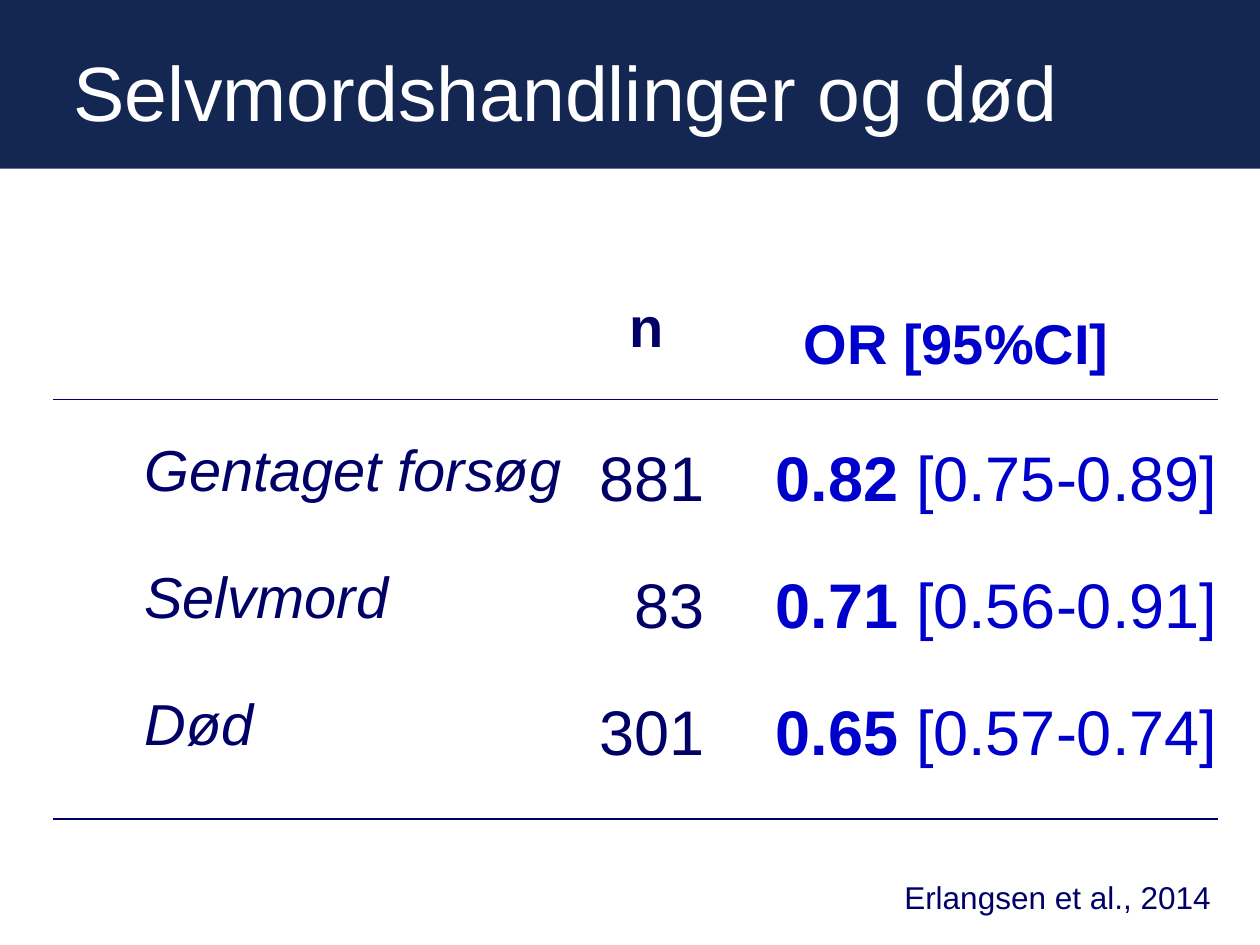
from lxml import etree
from pptx import Presentation
from pptx import util as u
from pptx.dml import color
from pptx.enum import shapes, text
from pptx.oxml import ns

TITLE = "Selvmordshandlinger og død"
SOURCE = "Erlangsen et al., 2014"
HEADINGS = {"count": "n", "ratio": "OR [95%CI]"}
ROWS = [
    (" Gentaget forsøg", "881", "0.82", " [0.75-0.89]"),
    (" Selvmord", "83", "0.71", " [0.56-0.91]"),
    (" Død", "301", "0.65", " [0.57-0.74]"),
]
FONT = "Arial"
BAND, WHITE, NAVY, BLUE = "142752", "FFFFFF", "000066", "0000CC"
WIDTH, HEIGHT, BAND_HEIGHT = 25.4, 19.05, 3.4
RULE_LEFT, RULE_RIGHT, RULE_TOPS = 1.07, 24.56, (8.05, 16.51)
LABEL_TOP, VALUE_TOP, ROW_STEP = 8.74, 8.84, 2.56
LEFT, RIGHT = text.PP_ALIGN.LEFT, text.PP_ALIGN.RIGHT


def rgb(value):
    return color.RGBColor.from_string(value)


def write(frame, parts, size, ink, align=LEFT, italic=False):
    para = frame.paragraphs[0]
    para.alignment = align
    for words, bold in parts:
        span = para.add_run()
        span.text = words
        span.font.name = FONT
        span.font.size = u.Pt(size)
        span.font.bold = bold
        span.font.italic = italic
        span.font.color.rgb = rgb(ink)


def add_text(page, place, parts, size, ink, align=LEFT, italic=False, inset=0, wrap=False):
    frame = page.shapes.add_textbox(*map(u.Cm, place)).text_frame
    frame.word_wrap = wrap
    frame.auto_size = text.MSO_AUTO_SIZE.SHAPE_TO_FIT_TEXT
    frame.margin_left = frame.margin_right = u.Cm(inset)
    frame.margin_top = frame.margin_bottom = u.Cm(inset / 2)
    write(frame, parts, size, ink, align, italic)


def add_title(page):
    band = page.shapes.add_shape(shapes.MSO_SHAPE.RECTANGLE, 0, 0, u.Cm(WIDTH), u.Cm(BAND_HEIGHT))
    band.shadow.inherit = False
    band.fill.solid()
    band.fill.fore_color.rgb = rgb(BAND)
    band.line.fill.background()
    title = page.shapes.title
    title.left, title.top, title.width, title.height = map(u.Cm, (1.22, 0.23, 22.86, 3.18))
    title.text_frame.vertical_anchor = text.MSO_ANCHOR.MIDDLE
    write(title.text_frame, [(TITLE, False)], 44, WHITE)
    title.element.addprevious(band.element)


def add_rule(page, top):
    rule = page.shapes.add_connector(
        shapes.MSO_CONNECTOR.STRAIGHT, u.Cm(RULE_LEFT), u.Cm(top), u.Cm(RULE_RIGHT), u.Cm(top))
    rule.line.color.rgb = rgb(NAVY)
    rule.line.width = u.Pt(0.75)
    etree.SubElement(rule.element.spPr, ns.qn("a:effectLst"))


def main():
    deck = Presentation()
    deck.slide_width, deck.slide_height = u.Cm(WIDTH), u.Cm(HEIGHT)
    page = deck.slides.add_slide(deck.slide_layouts[5])
    add_title(page)
    for top in RULE_TOPS:
        add_rule(page, top)
    add_text(page, (12.7, 5.87, 0.69, 1.37), [(HEADINGS["count"], True)], 32, NAVY)
    add_text(page, (16.2, 6.22, 8.97, 1.37), [(HEADINGS["ratio"], True)], 32, BLUE, wrap=True)
    for index, (label, count, ratio, interval) in enumerate(ROWS):
        label_top = LABEL_TOP + index * ROW_STEP
        value_top = VALUE_TOP + index * ROW_STEP
        add_text(page, (2.59, label_top, 8.81, 1.42), [(label, False)], 33, NAVY, italic=True)
        add_text(page, (12.07, value_top, 2.13, 1.55), [(count, False)], 36, NAVY, RIGHT)
        add_text(page, (15.57, value_top, 8.97, 1.55),
                 [(ratio, True), (interval, False)], 36, BLUE, RIGHT)
    add_text(page, (17.98, 17.58, 7.19, 1.07), [(SOURCE, False)], 18, NAVY, inset=0.25, wrap=True)
    deck.save("out.pptx")


if __name__ == "__main__":
    main()
